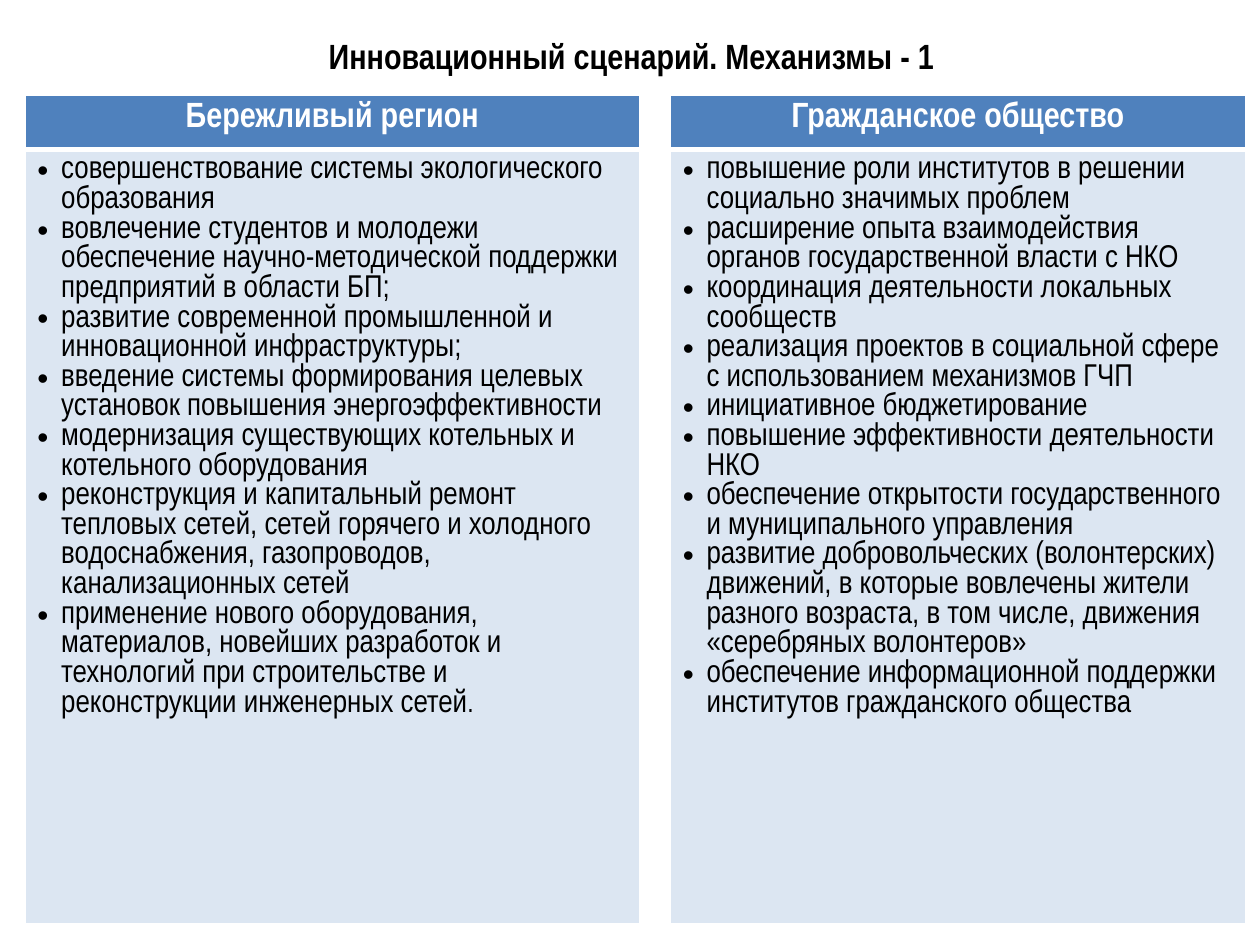
"""Build a slide with a title and a table of two lists of mechanisms."""
from dataclasses import dataclass

import pptx
import pptx.dml.color
import pptx.enum.text
import pptx.oxml.ns
import pptx.oxml.xmlchemy
import pptx.table
import pptx.text.text
import pptx.util
from lxml import etree

Cm = pptx.util.Cm
Pt = pptx.util.Pt
RGB = pptx.dml.color.RGBColor
ALIGN = pptx.enum.text.PP_ALIGN

FACE = "Arial Narrow"
BLACK = RGB(0, 0, 0)
WHITE = RGB(255, 255, 255)
BLUE = RGB(0x4F, 0x81, 0xBD)
PALE = RGB(0xDC, 0xE6, 0xF2)
INDENT = Cm(0.48)


@dataclass
class Topic:
    col: int
    head: str
    items: list[str]
    end: str = ""


TOPICS = [
    Topic(0, "Бережливый регион", [
        "совершенствование системы экологического образования",
        "вовлечение студентов и молодежи обеспечение научно-методической "
        "поддержки предприятий в области БП;",
        "развитие современной промышленной и инновационной инфраструктуры;",
        "введение системы формирования целевых установок повышения "
        "энергоэффективности",
        "модернизация существующих котельных и котельного оборудования",
        "реконструкция и капитальный ремонт тепловых сетей, сетей горячего и "
        "холодного водоснабжения, газопроводов, канализационных сетей",
        "применение нового оборудования, материалов, новейших разработок и "
        "технологий при строительстве и реконструкции инженерных сетей",
    ], "."),
    Topic(2, "Гражданское общество", [
        "повышение роли институтов в решении социально значимых проблем",
        "расширение опыта взаимодействия органов государственной власти с НКО",
        "координация деятельности локальных сообществ",
        "реализация проектов в социальной сфере с использованием механизмов ГЧП",
        "инициативное бюджетирование",
        "повышение эффективности деятельности НКО",
        "обеспечение открытости государственного и муниципального управления",
        "развитие добровольческих (волонтерских) движений, в которые вовлечены "
        "жители разного возраста, в том числе, движения «серебряных волонтеров»",
        "обеспечение информационной поддержки институтов гражданского общества",
    ]),
]


def style(par: pptx.text.text._Paragraph, size: int, color: RGB, bold: bool) -> None:
    """Set the font of a paragraph."""
    font = par.font
    font.name = FACE
    font.size = Pt(size)
    font.bold = bold
    font.color.rgb = color


def add_head(par: pptx.text.text._Paragraph, text: str, color: RGB) -> None:
    """Write a bold centred heading."""
    par.text = text
    par.alignment = ALIGN.CENTER
    style(par, 20, color, True)


def add_bullet(par: pptx.text.text._Paragraph, text: str) -> None:
    """Write one bulleted item."""
    par.text = text
    props = par._p.get_or_add_pPr()
    props.set("marL", str(INDENT))
    props.set("indent", str(-INDENT))
    qn = pptx.oxml.ns.qn
    etree.SubElement(props, qn("a:buFont"), typeface="Arial")
    etree.SubElement(props, qn("a:buChar"), char="•")
    style(par, 18, BLACK, False)


def add_edges(cell: pptx.table._Cell, base: float) -> None:
    """Draw white borders, with the given width at the bottom."""
    qn = pptx.oxml.ns.qn
    props = cell._tc.get_or_add_tcPr()
    for spot, side in enumerate("LRTB"):
        width = Pt(base if side == "B" else 1)
        line = etree.Element(qn(f"a:ln{side}"), w=str(width))
        fill = etree.SubElement(line, qn("a:solidFill"))
        etree.SubElement(fill, qn("a:srgbClr"), val=str(WHITE))
        props.insert(spot, line)


def add_topic(table: pptx.table.Table, topic: Topic) -> None:
    """Fill one column with a heading and its list."""
    top, body = (table.cell(row, topic.col) for row in range(2))
    for cell, color in ((top, BLUE), (body, PALE)):
        cell.fill.solid()
        cell.fill.fore_color.rgb = color
    add_head(top.text_frame.paragraphs[0], topic.head, WHITE)
    frame = body.text_frame
    for spot, item in enumerate(topic.items):
        par = frame.add_paragraph() if spot else frame.paragraphs[0]
        add_bullet(par, item)
    if topic.end:
        run = frame.paragraphs[-1].add_run()
        run.text = topic.end
        run.font.size = Pt(16)


def main() -> None:
    """Build and save the slide."""
    deck = pptx.Presentation()
    deck.slide_width, deck.slide_height = Cm(25.4), Cm(19.05)
    slide = deck.slides.add_slide(deck.slide_layouts[5])

    title = slide.shapes.title
    title.left, title.top = Cm(1.3), Cm(0.56)
    title.width, title.height = Cm(22.86), Cm(1.12)
    frame = title.text_frame
    frame.vertical_anchor = pptx.enum.text.MSO_ANCHOR.MIDDLE
    add_head(frame.paragraphs[0], "Инновационный сценарий. Механизмы - 1", BLACK)

    widths, heights = (12.4, 0.61, 11.6), (1.09, 15.6)
    table = slide.shapes.add_table(
        len(heights), len(widths), Cm(0.5), Cm(1.93),
        Cm(sum(widths)), Cm(sum(heights))).table
    table.first_row = table.horz_banding = False
    for col, width in zip(table.columns, widths):
        col.width = Cm(width)
    for row, height, base in zip(table.rows, heights, (3, 1)):
        row.height = Cm(height)
        for cell in row.cells:
            cell.fill.background()
            add_edges(cell, base)
    for topic in TOPICS:
        add_topic(table, topic)

    deck.save("out.pptx")


if __name__ == "__main__":
    main()
